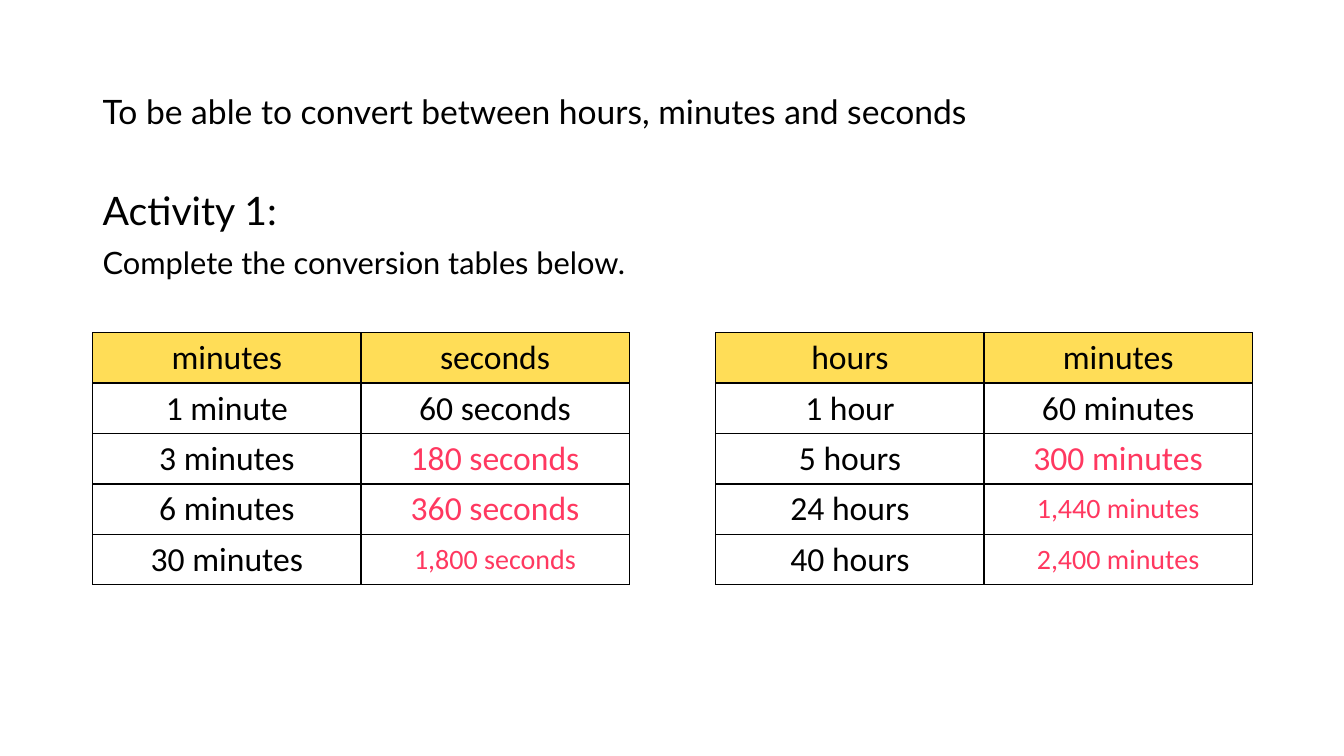
from lxml import etree
from pptx import Presentation
from pptx.dml.color import RGBColor
from pptx.enum.text import MSO_ANCHOR, PP_ALIGN
from pptx.oxml.ns import qn
from pptx.util import Inches, Pt

CENTER = PP_ALIGN.CENTER
TOP, MIDDLE = MSO_ANCHOR.TOP, MSO_ANCHOR.MIDDLE

OBJECTIVE = "To be able to convert between hours, minutes and seconds"
ACTIVITY = "Activity 1:"
INSTRUCTION = "Complete the conversion tables below."
GIVEN_ROWS = 2  # heading and worked example; later right-hand cells are answers
CONVERSIONS = [
    [("minutes", "seconds"), ("1 minute", "60 seconds"), ("3 minutes", "180 seconds"),
     ("6 minutes", "360 seconds"), ("30 minutes", "1,800 seconds")],
    [("hours", "minutes"), ("1 hour", "60 minutes"), ("5 hours", "300 minutes"),
     ("24 hours", "1,440 minutes"), ("40 hours", "2,400 minutes")],
]

THEME = {
    "text_font": "Lato", "table_font": "Calibri",
    "ink": "000000", "answer": "FF3860", "heading": "FFDD57", "paper": "FFFFFF",
    "objective": 24, "activity": 28, "instruction": 22, "cell": 24, "long_answer": 20,
    "border": 1,
}

LEFT, TABLE_TOP = 0.92, 3.3
TABLE_STEP = 6.18
COLUMN_WIDTH, ROW_HEIGHT = 2.66, 0.5


def style_font(font, face, size, color):
    for name, value in {"name": face, "size": Pt(size)}.items():
        setattr(font, name, value)
    font.color.rgb = RGBColor.from_string(color)


def add_text(slide, box, lines, anchor):
    """Add a text box holding (text, size) lines."""
    frame = slide.shapes.add_textbox(*map(Inches, box)).text_frame
    frame.word_wrap = True
    frame.vertical_anchor = anchor
    for index, (text, size) in enumerate(lines):
        paragraph = frame.add_paragraph() if index else frame.paragraphs[0]
        paragraph.text = text
        paragraph.line_spacing = 0.9
        if index:
            paragraph.space_before = Pt(10)
        style_font(paragraph.runs[0].font, THEME["text_font"], size, THEME["ink"])


def add_borders(cell):
    """Put the four side lines ahead of the cell's fill, as the schema asks."""
    properties = cell._tc.get_or_add_tcPr()
    for position, side in enumerate(("lnL", "lnR", "lnT", "lnB")):
        line = etree.Element(qn(f"a:{side}"), w=str(Pt(THEME["border"])))
        fill = etree.SubElement(line, qn("a:solidFill"))
        etree.SubElement(fill, qn("a:srgbClr"), val=THEME["ink"])
        properties.insert(position, line)


def add_conversion_table(slide, left, rows):
    columns = len(rows[0])
    table = slide.shapes.add_table(
        len(rows), columns, Inches(left), Inches(TABLE_TOP),
        Inches(columns * COLUMN_WIDTH), Inches(len(rows) * ROW_HEIGHT)).table
    for row_index, row in enumerate(rows):
        for column_index, text in enumerate(row):
            is_answer = column_index == 1 and row_index >= GIVEN_ROWS
            cell = table.cell(row_index, column_index)
            cell.text = text
            cell.vertical_anchor = MIDDLE
            cell.fill.solid()
            cell.fill.fore_color.rgb = RGBColor.from_string(
                THEME["paper" if row_index else "heading"])
            add_borders(cell)
            paragraph = cell.text_frame.paragraphs[0]
            paragraph.alignment = CENTER
            style_font(paragraph.runs[0].font, THEME["table_font"],
                       THEME["long_answer" if "," in text else "cell"],
                       THEME["answer" if is_answer else "ink"])


def main():
    presentation = Presentation()
    presentation.slide_width, presentation.slide_height = Inches(13.33), Inches(7.5)
    slide = presentation.slides.add_slide(presentation.slide_layouts[6])
    add_text(slide, (LEFT, 0.4, 9.6, 1.45), [(OBJECTIVE, THEME["objective"])], MIDDLE)
    add_text(slide, (LEFT, 1.85, 12.05, 4.76),
             [(ACTIVITY, THEME["activity"]), (INSTRUCTION, THEME["instruction"])], TOP)
    for index, rows in enumerate(CONVERSIONS):
        add_conversion_table(slide, LEFT + index * TABLE_STEP, rows)
    presentation.save("out.pptx")


if __name__ == "__main__":
    main()
